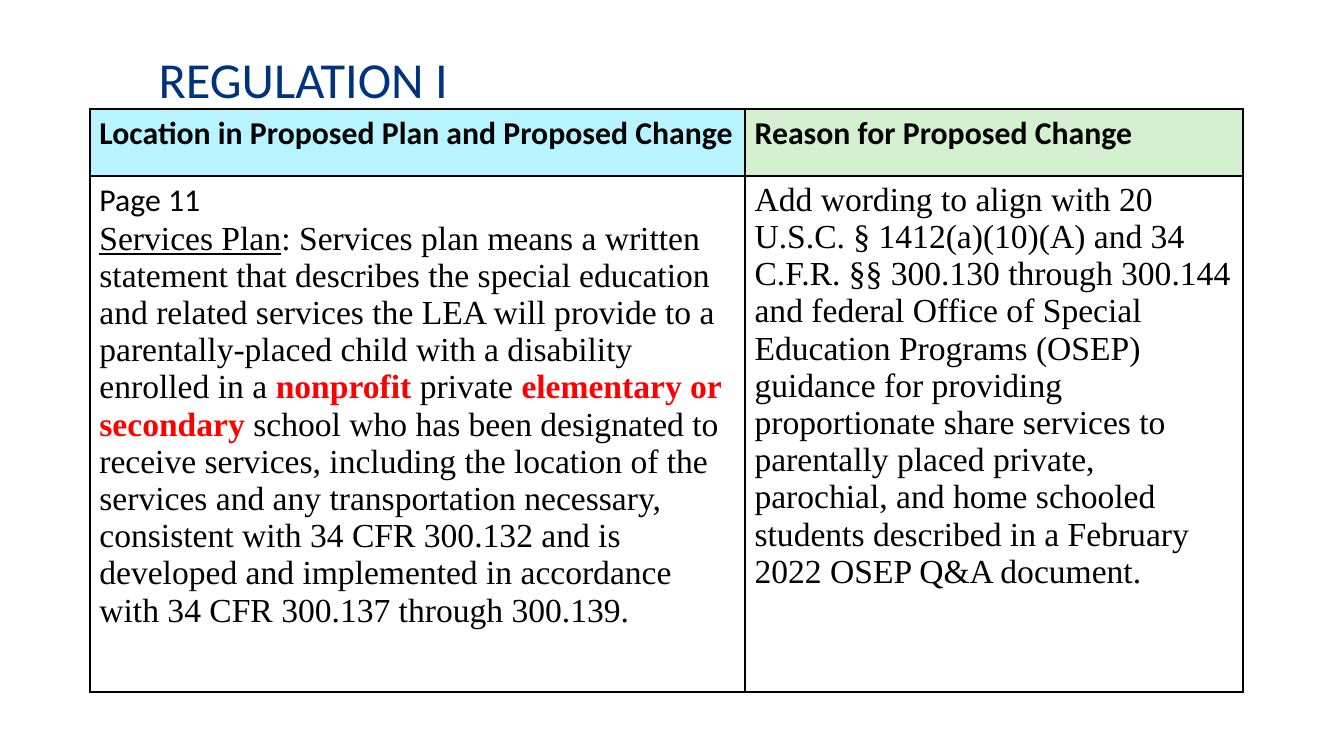
from lxml import etree
from pptx import Presentation
from pptx.dml.color import RGBColor
from pptx.enum.text import MSO_ANCHOR, PP_ALIGN
from pptx.oxml.ns import qn
from pptx.util import Pt

PX = 4572  # 200 px to the inch
LEFT, TOP, MIDDLE = PP_ALIGN.LEFT, MSO_ANCHOR.TOP, MSO_ANCHOR.MIDDLE
SANS, SERIF = "Calibri", "Times New Roman"
BLACK, RED, NAVY = "000000", "FF0000", "00337F"


def rgb(value):
    return RGBColor.from_string(value)


def write(paragraph, text, font=SERIF, size=18, color=BLACK, bold=False,
          underline=False):
    paragraph.alignment = LEFT
    run = paragraph.add_run()
    run.text = text
    run.font.name = font
    run.font.size = Pt(size)
    run.font.bold = bold
    run.font.underline = underline
    run.font.color.rgb = rgb(color)


prs = Presentation()
prs.slide_width, prs.slide_height = 2000 * PX, 1125 * PX
slide = prs.slides.add_slide(prs.slide_layouts[5])

# Title
title = slide.shapes.title
title.left, title.top, title.width, title.height = 216 * PX, 45 * PX, 1784 * PX, 142 * PX
title.text_frame.vertical_anchor = MIDDLE
write(title.text_frame.paragraphs[0], "REGULATION I", font=SANS, size=27, color=NAVY)

# Table grid
column_widths, row_heights = [975, 741], [100, 768]
changes = slide.shapes.add_table(
    2, 2, 134 * PX, 162 * PX, sum(column_widths) * PX, sum(row_heights) * PX).table
for column, width in zip(changes.columns, column_widths):
    column.width = width * PX
for row, height in zip(changes.rows, row_heights):
    row.height = height * PX

# Cell margins, borders and fills
fills = ["B8F4FF", "D4F0D1", "FFFFFF", "FFFFFF"]
for cell, fill in zip(changes.iter_cells(), fills):
    cell.margin_left = cell.margin_right = 14 * PX
    cell.margin_top = cell.margin_bottom = 8 * PX
    cell.vertical_anchor = TOP
    properties = cell._tc.get_or_add_tcPr()
    for side in ("a:lnL", "a:lnR", "a:lnT", "a:lnB"):
        border = etree.SubElement(properties, qn(side), w=str(Pt(1)))
        solid = etree.SubElement(border, qn("a:solidFill"))
        etree.SubElement(solid, qn("a:srgbClr"), val=BLACK)
    cell.fill.solid()
    cell.fill.fore_color.rgb = rgb(fill)

# Header row
headings = ["Location in Proposed Plan and Proposed Change", "Reason for Proposed Change"]
for column, heading in enumerate(headings):
    write(changes.cell(0, column).text_frame.paragraphs[0], heading,
          font=SANS, size=17, bold=True)

# Proposed change, with the added words in bold red
change = changes.cell(1, 0).text_frame
write(change.paragraphs[0], "Page 11", font=SANS, size=17)
added = {"color": RED, "bold": True}
wording = [
    ("Services Plan", {"underline": True}),
    (": Services plan means a written statement that describes the special education "
     "and related services the LEA will provide to a parentally-placed child with a "
     "disability enrolled in a ", {}),
    ("nonprofit", added),
    (" private ", {}),
    ("elementary or secondary", added),
    (" school who has been designated to receive services, including the location of "
     "the services and any transportation necessary, consistent with 34 CFR 300.132 "
     "and is developed and implemented in accordance with 34 CFR 300.137 through "
     "300.139.", {}),
]
definition = change.add_paragraph()
for text, style in wording:
    write(definition, text, **style)

# Reason
write(changes.cell(1, 1).text_frame.paragraphs[0],
      "Add wording to align with 20 U.S.C. § 1412(a)(10)(A) and 34 C.F.R. §§ 300.130 "
      "through 300.144 and federal Office of Special Education Programs (OSEP) guidance "
      "for providing proportionate share services to parentally placed private, "
      "parochial, and home schooled students described in a February 2022 OSEP Q&A "
      "document.")

prs.save("out.pptx")
